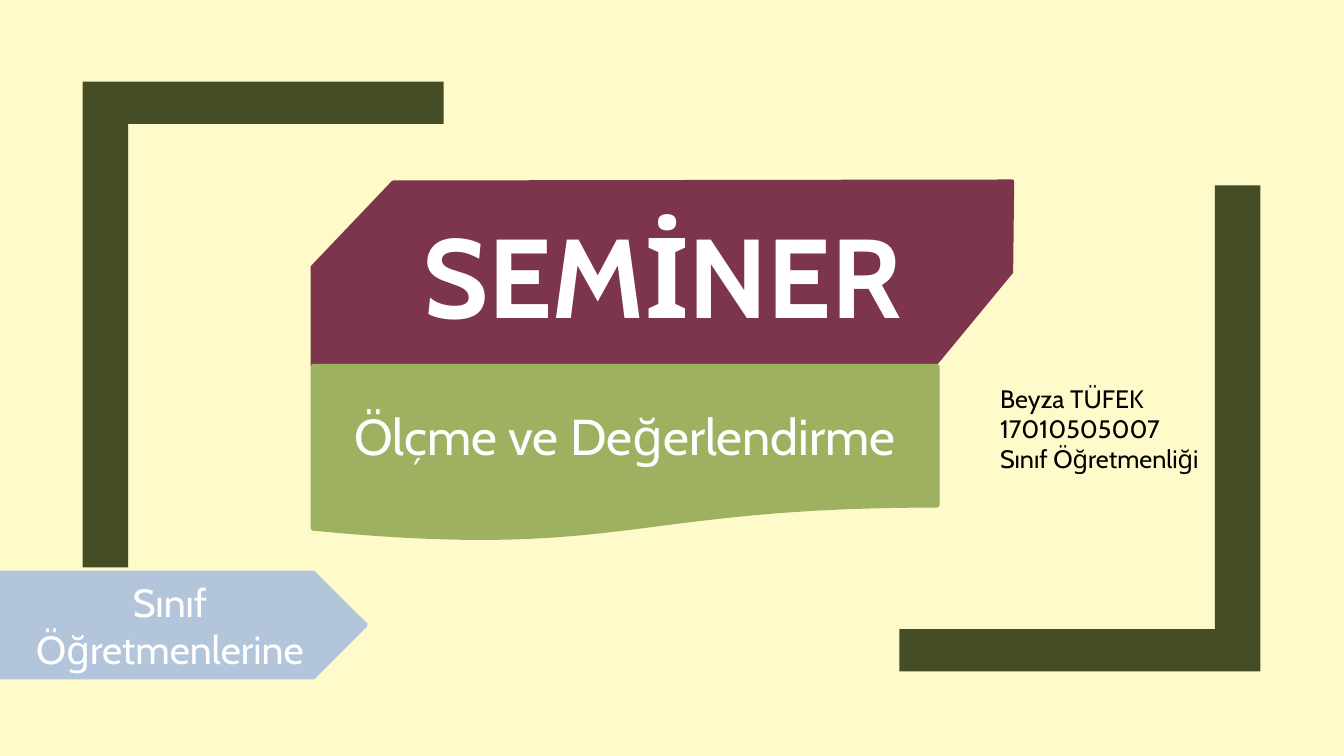
from pptx import Presentation
from pptx.dml.color import RGBColor
from pptx.enum.shapes import MSO_SHAPE
from pptx.enum.text import MSO_ANCHOR, PP_ALIGN
from pptx.util import Inches, Pt

CREAM = RGBColor(0xFE, 0xFA, 0xC9)
OLIVE = RGBColor(0x44, 0x4D, 0x26)
PLUM = RGBColor(0x7C, 0x35, 0x4D)
GREEN = RGBColor(0x9E, 0xB1, 0x60)
BLUE = RGBColor(0xB3, 0xC5, 0xDA)
WHITE = RGBColor(0xFF, 0xFF, 0xFF)
BLACK = RGBColor(0, 0, 0)
FONT = "Cabin"


def add_text(sp, text, size, color=WHITE, bold=False, align=PP_ALIGN.CENTER,
             anchor=MSO_ANCHOR.MIDDLE):
    tf = sp.text_frame
    tf.word_wrap = True
    tf.vertical_anchor = anchor
    for i, line in enumerate(text.split("\n")):
        p = tf.paragraphs[0] if i == 0 else tf.add_paragraph()
        p.alignment = align
        r = p.add_run()
        r.text = line
        r.font.name = FONT
        r.font.size = Pt(size)
        r.font.bold = bold
        r.font.color.rgb = color


def paint(sp, color, outlined=True):
    sp.shadow.inherit = False
    sp.fill.solid()
    sp.fill.fore_color.rgb = color
    if outlined:
        sp.line.color.rgb = color
        sp.line.width = Pt(2.75)
    else:
        sp.line.fill.background()


def add_outline(s, points):
    """Draw a closed polygon through points given in inches."""
    start, *rest = [(Inches(x), Inches(y)) for x, y in points]
    builder = s.shapes.build_freeform(*start)
    builder.add_line_segments(rest, close=True)
    return builder.convert_to_shape()


def corner_bracket(s, x, y, w, h, flipped=False):
    """Draw an L-shaped bracket at the top left, or turned to the bottom right."""
    across, down = 0.45, 0.42
    points = [(0, 0), (w, 0), (w, down), (across, down), (across, h), (0, h)]
    if flipped:
        points = [(w - px, h - py) for px, py in points]
    sp = add_outline(s, [(x + px, y + py) for px, py in points])
    paint(sp, OLIVE, outlined=False)


def title_banner(s, x, y, w, h):
    corners = [(0.8, 0.01), (w, 0), (w - 0.01, 0.9), (w - 0.72, h - 0.08),
               (w - 0.79, h), (0, h - 0.01), (0, 0.85)]
    sp = add_outline(s, [(x + px, y + py) for px, py in corners])
    paint(sp, PLUM)
    add_text(sp, "SEMİNER", 80, bold=True)


def label(s, preset, x, y, w, h, color, text, size):
    sp = s.shapes.add_shape(preset, Inches(x), Inches(y), Inches(w), Inches(h))
    paint(sp, color)
    add_text(sp, text, size)


def presenter(s, x, y, w, h):
    sp = s.shapes.add_textbox(Inches(x), Inches(y), Inches(w), Inches(h))
    add_text(sp, "Beyza TÜFEK\n17010505007\nSınıf Öğretmenliği", 18, color=BLACK,
             align=PP_ALIGN.LEFT, anchor=MSO_ANCHOR.TOP)


def title_slide(prs):
    s = prs.slides.add_slide(prs.slide_layouts[6])
    s.background.fill.solid()
    s.background.fill.fore_color.rgb = CREAM
    corner_bracket(s, 8.92, 1.84, 3.58, 4.82, flipped=True)
    corner_bracket(s, 0.82, 0.81, 3.58, 4.82)
    title_banner(s, 3.1, 1.8, 6.94, 1.84)
    label(s, MSO_SHAPE.FLOWCHART_DOCUMENT, 3.1, 3.63, 6.2, 1.73, GREEN,
          "Ölçme ve Değerlendirme", 36)
    label(s, MSO_SHAPE.PENTAGON, 0, 5.68, 3.63, 1.04, BLUE,
          "Sınıf Öğretmenlerine", 28)
    presenter(s, 9.82, 3.75, 2.45, 1.01)


def main():
    prs = Presentation()
    prs.slide_width = Inches(13.33)
    prs.slide_height = Inches(7.5)
    title_slide(prs)
    prs.save("out.pptx")


if __name__ == "__main__":
    main()
